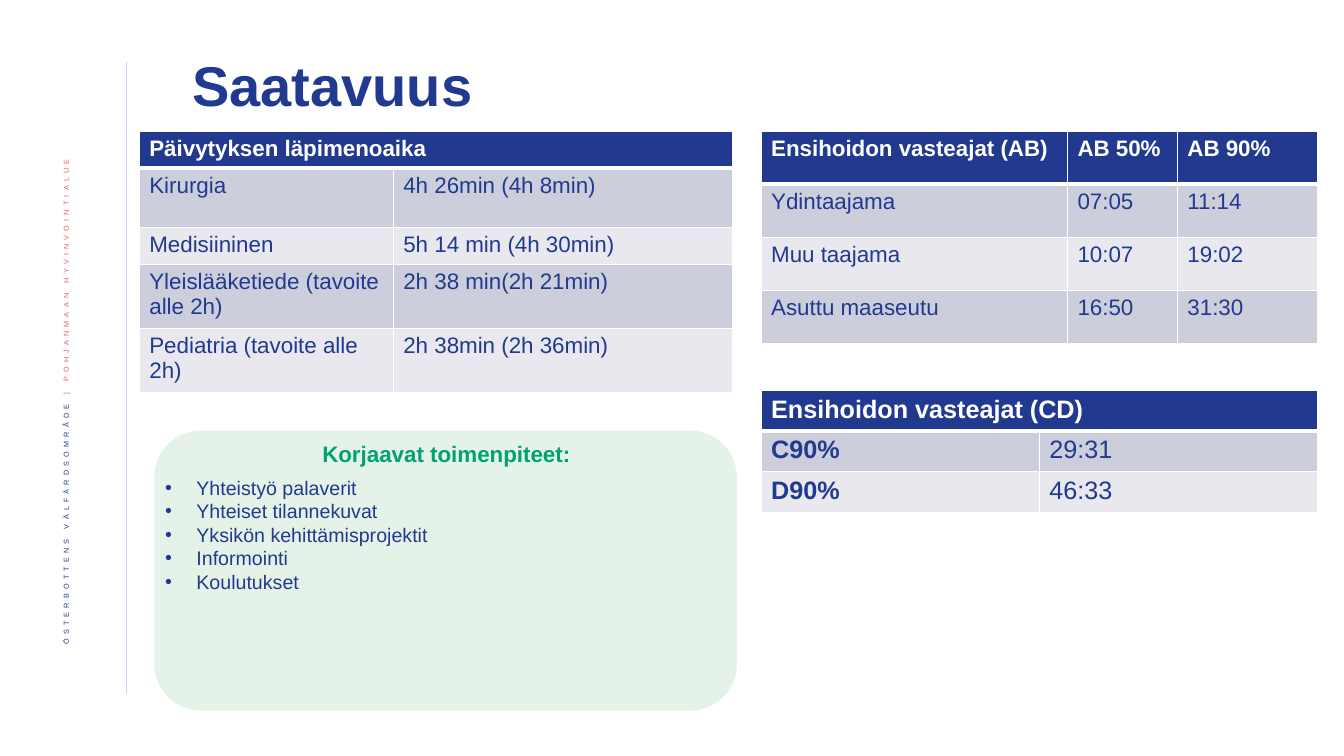
from lxml import etree
from pptx import Presentation
from pptx.dml.color import RGBColor
from pptx.enum.shapes import MSO_CONNECTOR as CONN, MSO_SHAPE as SHAPE
from pptx.enum.text import MSO_ANCHOR as ANCHOR, PP_ALIGN as ALIGN
from pptx.oxml.ns import qn
from pptx.util import Cm, Pt

NAVY = RGBColor(0x21, 0x3A, 0x8F)
CORAL = RGBColor(0xEB, 0x5C, 0x5F)
GREEN = RGBColor(0x00, 0xA1, 0x74)
MINT = RGBColor(0x85, 0xC5, 0x98)
WHITE = RGBColor(0xFF, 0xFF, 0xFF)
RULE = RGBColor(0xC9, 0xD2, 0xF2)
BANDS = RGBColor(0xCD, 0xCE, 0xDB), RGBColor(0xE8, 0xE8, 0xEE)


class SlideBuilder:
    font = "Arial"

    def __init__(self, slide):
        self.s = slide

    def run(self, p, text, size, color, bold=False):
        r = p.add_run()
        r.text = text
        for name, value in dict(name=self.font, size=Pt(size), bold=bold).items():
            setattr(r.font, name, value)
        r.font.color.rgb = color
        return r

    def text(self, box, **frame):
        tf = self.s.shapes.add_textbox(*map(Cm, box)).text_frame
        for name, value in dict(word_wrap=True, **frame).items():
            setattr(tf, name, value)
        return tf

    def bullet(self, p, indent):
        pPr = p._p.get_or_add_pPr()
        pPr.set("marL", str(Cm(indent)))
        pPr.set("indent", str(-Cm(indent)))
        etree.SubElement(pPr, qn("a:buFont"), typeface=self.font)
        etree.SubElement(pPr, qn("a:buChar"), char="•")

    def line(self, x1, y1, x2, y2, color, width):
        sp = self.s.shapes.add_connector(CONN.STRAIGHT, *map(Cm, (x1, y1, x2, y2)))
        sp.line.color.rgb, sp.line.width = color, Pt(width)
        etree.SubElement(sp._element.spPr, qn("a:effectLst"))

    def panel(self, box, color, opacity):
        sp = self.s.shapes.add_shape(SHAPE.ROUNDED_RECTANGLE, *map(Cm, box))
        sp.shadow.inherit = False
        sp.fill.solid()
        sp.fill.fore_color.rgb = color
        clr = sp.fill._xPr.find(".//" + qn("a:srgbClr"))
        etree.SubElement(clr, qn("a:alpha"), val=str(opacity * 1000))
        sp.line.fill.background()

    def borders(self, cell, row):
        tcPr = cell._tc.get_or_add_tcPr()
        thick = {"T": row == 1, "B": row == 0}  # heavy rule under the header
        for side in "LRTB":
            width = Pt(3 if thick.get(side) else 1)
            ln = etree.SubElement(tcPr, qn("a:ln" + side), w=str(width))
            fill = etree.SubElement(ln, qn("a:solidFill"))
            etree.SubElement(fill, qn("a:srgbClr"), val=str(WHITE))

    def table(self, left, top, widths, heights, rows, size, bold_labels=False):
        box = left, top, sum(widths), sum(heights)
        table = self.s.shapes.add_table(len(rows), len(widths), *map(Cm, box)).table
        for col, width in zip(table.columns, widths):
            col.width = Cm(width)
        for row, height in zip(table.rows, heights):
            row.height = Cm(height)
        for i, texts in enumerate(rows):
            for j in range(len(widths)):
                cell = table.cell(i, j)
                self.borders(cell, i)
                cell.fill.solid()
                cell.fill.fore_color.rgb = BANDS[(i - 1) % 2] if i else NAVY
                if j < len(texts):
                    bold = i == 0 or (bold_labels and j == 0)
                    p = cell.text_frame.paragraphs[0]
                    self.run(p, texts[j], size, NAVY if i else WHITE, bold)
        if len(rows[0]) == 1:
            table.cell(0, 0).merge(table.cell(0, len(widths) - 1))


def main():
    prs = Presentation()
    prs.slide_width, prs.slide_height = Cm(33.87), Cm(19.05)
    b = SlideBuilder(prs.slides.add_slide(prs.slide_layouts[6]))

    # Side rule and vertical organisation name
    b.line(3.18, 1.55, 3.18, 17.48, RULE, 0.5)
    tf = b.text((1.07, 3.61, 1.32, 14.55), vertical_anchor=ANCHOR.MIDDLE)
    tf._txBody.bodyPr.set("vert", "vert270")
    p = tf.paragraphs[0]
    p.alignment, p.line_spacing = ALIGN.RIGHT, 0.9
    for text, color in (("ÖSTERBOTTENS VÄLFÄRDSOMRÅDE ", NAVY),
                        ("| POHJANMAAN HYVINVOINTIALUE ", CORAL)):
        rPr = b.run(p, text, 9, color)._r.get_or_add_rPr()
        rPr.set("baseline", "30000")
        rPr.set("spc", "300")

    # Title
    p = b.text((4.6, 1.14, 27.89, 2.16), vertical_anchor=ANCHOR.MIDDLE).paragraphs[0]
    p.line_spacing = 0.9
    b.run(p, "Saatavuus", 40, NAVY, True)

    # Emergency lead times
    b.table(3.51, 3.3, (6.4, 8.56), (0.89, 1.5, 0.89, 1.5, 1.5), (
        ("Päivytyksen läpimenoaika",),
        ("Kirurgia", "4h 26min (4h 8min)"),
        ("Medisiininen", "5h 14 min (4h 30min)"),
        ("Yleislääketiede (tavoite alle 2h)", "2h 38 min(2h 21min)"),
        ("Pediatria (tavoite alle 2h)", "2h 38min (2h 36min)"),
    ), 16)

    # Response times, urgency classes AB and CD
    b.table(19.18, 3.3, (7.72, 2.77, 3.53), [1.34] * 4, (
        ("Ensihoidon vasteajat (AB)", "AB 50%", "AB 90%"),
        ("Ydintaajama", "07:05", "11:14"),
        ("Muu taajama", "10:07", "19:02"),
        ("Asuttu maaseutu", "16:50", "31:30"),
    ), 16)
    b.table(19.18, 9.83, [7.01] * 2, [1.03] * 3, (
        ("Ensihoidon vasteajat (CD)",),
        ("C90%", "29:31"),
        ("D90%", "46:33"),
    ), 18, bold_labels=True)

    # Corrective actions
    b.panel((3.89, 10.85, 14.68, 7.06), MINT, 22)
    tf = b.text((3.91, 10.97, 14.68, 4.14))
    p = tf.paragraphs[0]
    p.alignment, p.space_after = ALIGN.CENTER, Pt(6)
    b.run(p, "Korjaavat toimenpiteet:", 16, GREEN, True)
    for action in ("Yhteistyö palaverit", "Yhteiset tilannekuvat",
                   "Yksikön kehittämisprojektit", "Informointi", "Koulutukset"):
        p = tf.add_paragraph()
        b.bullet(p, 0.79)
        b.run(p, action, 14, NAVY)

    prs.save("out.pptx")


if __name__ == "__main__":
    main()
